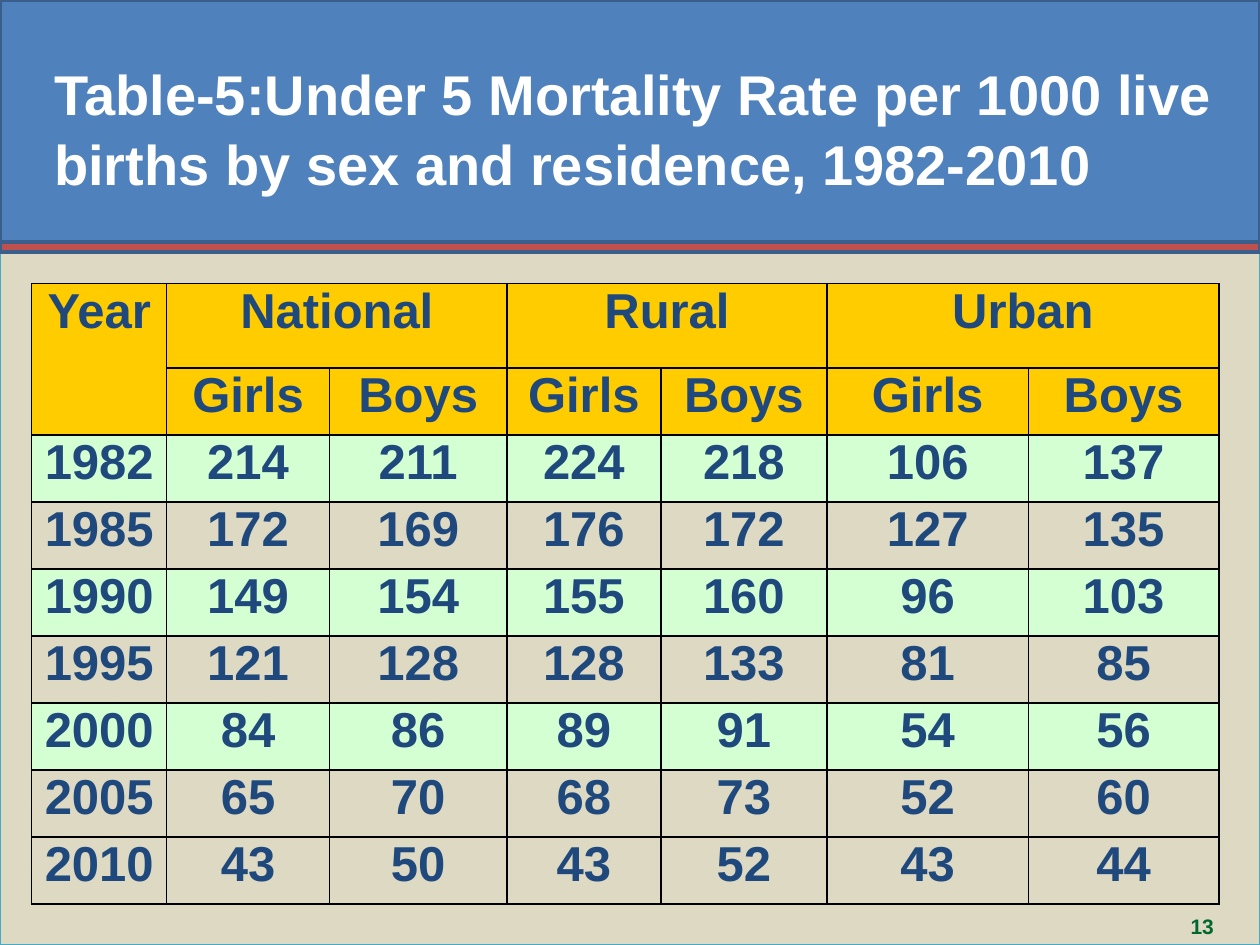
from lxml.etree import fromstring
from pptx import Presentation
from pptx.dml.color import RGBColor
from pptx.enum.shapes import MSO_SHAPE
from pptx.enum.text import MSO_ANCHOR, MSO_AUTO_SIZE, PP_ALIGN
from pptx.oxml.ns import nsdecls
from pptx.util import Cm, Pt


def rgb(hex_color):
    return RGBColor.from_string(hex_color)


def style(p, size, color, align):
    p.alignment = align
    p.font.name = "Arial"
    p.font.size = Pt(size)
    p.font.bold = True
    p.font.color.rgb = rgb(color)


prs = Presentation()
prs.slide_width, prs.slide_height = Cm(25.4), Cm(19.05)
s = prs.slides.add_slide(prs.slide_layouts[5])

# Background panel, title band and red rule
for top, height, fill, line, width in [
    (5.08, 13.97, "DDD9C3", "46AAC5", 0.75),
    (0, 4.88, "4F81BD", "3A5F8C", 2),
    (4.88, 0.2, "C0504D", "3A5F8C", 2),
]:
    sp = s.shapes.add_shape(MSO_SHAPE.RECTANGLE, 0, Cm(top), prs.slide_width, Cm(height))
    sp.shadow.inherit = False
    sp.fill.solid()
    sp.fill.fore_color.rgb = rgb(fill)
    sp.line.color.rgb = rgb(line)
    sp.line.width = Pt(width)

# Title, brought in front of its band
title = s.shapes.title
s.shapes.element.append(title.element)
title.left, title.top, title.width, title.height = Cm(0.84), Cm(0.43), Cm(24.13), Cm(4.24)
tf = title.text_frame
tf.text = "Table-5:Under 5 Mortality Rate per 1000 live births by sex and residence, 1982-2010"
tf.auto_size = MSO_AUTO_SIZE.NONE
tf.word_wrap = True
tf.vertical_anchor = MSO_ANCHOR.MIDDLE
style(tf.paragraphs[0], 32, "FFFFFF", PP_ALIGN.LEFT)
tf.paragraphs[0].line_spacing = 1.05

# Mortality table
rows = [
    ["Year", "National", "", "Rural", "", "Urban", ""],
    [""] + ["Girls", "Boys"] * 3,
    [1982, 214, 211, 224, 218, 106, 137],
    [1985, 172, 169, 176, 172, 127, 135],
    [1990, 149, 154, 155, 160, 96, 103],
    [1995, 121, 128, 128, 133, 81, 85],
    [2000, 84, 86, 89, 91, 54, 56],
    [2005, 65, 70, 68, 73, 52, 60],
    [2010, 43, 50, 43, 52, 43, 44],
]
row_fills = ["FFCC00", "FFCC00", "D3FFD3", None, "D3FFD3", None, "D3FFD3", None, None]
col_widths = [2.72, 3.28, 3.58, 3.1, 3.35, 4.06, 3.84]
row_heights = [1.7] + [1.35] * 8

table = s.shapes.add_table(
    len(rows), len(col_widths), Cm(0.64), Cm(5.72), Cm(sum(col_widths)), Cm(sum(row_heights))
).table
table.first_row = table.horz_banding = False
for col, width in zip(table.columns, col_widths):
    col.width = Cm(width)
for row, height in zip(table.rows, row_heights):
    row.height = Cm(height)

# Merged headers
table.cell(0, 0).merge(table.cell(1, 0))
for c in (1, 3, 5):
    table.cell(0, c).merge(table.cell(0, c + 1))

# Cell text, fills and borders
for r, (values, fill) in enumerate(zip(rows, row_fills)):
    for c, value in enumerate(values):
        cell = table.cell(r, c)
        cell.margin_left = cell.margin_right = Cm(0.18)
        cell.margin_top = cell.margin_bottom = 0
        if value != "":
            cell.text = str(value)
        style(cell.text_frame.paragraphs[0], 28, "1F497D", PP_ALIGN.CENTER)
        if fill:
            cell.fill.solid()
            cell.fill.fore_color.rgb = rgb(fill)
        else:
            cell.fill.background()
        tcPr = cell._tc.get_or_add_tcPr()
        for i, side in enumerate(["lnL", "lnR", "lnT", "lnB"]):
            tcPr.insert(i, fromstring(
                f'<a:{side} {nsdecls("a")} w="12700"><a:solidFill>'
                f'<a:srgbClr val="000000"/></a:solidFill></a:{side}>'))

# Page number
tf = s.shapes.add_textbox(Cm(23.5), Cm(18.29), Cm(1.47), Cm(0.76)).text_frame
tf.word_wrap = True
tf.text = "13"
style(tf.paragraphs[0], 12, "00682F", PP_ALIGN.CENTER)

prs.save("out.pptx")
